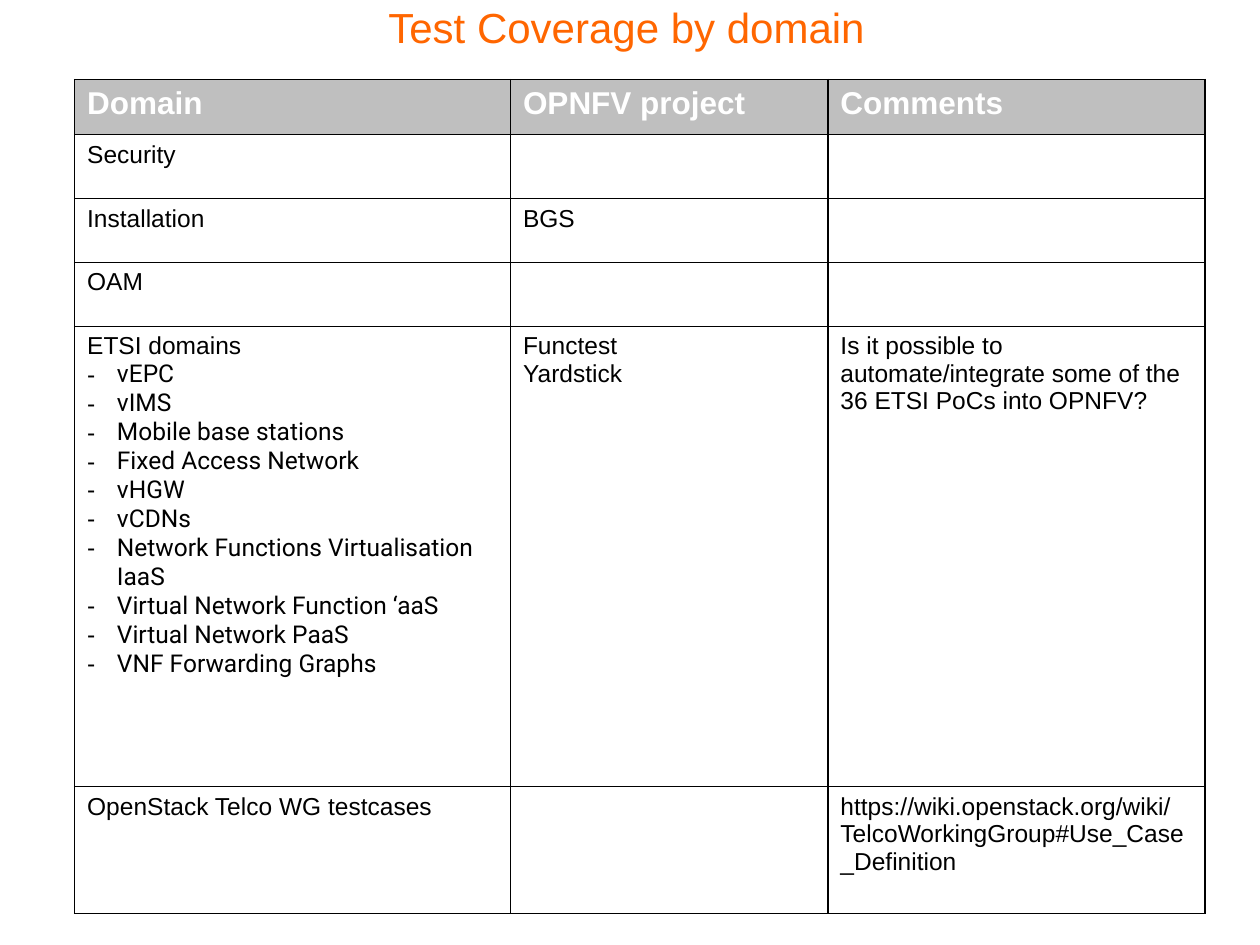
from lxml.etree import SubElement
from pptx import Presentation
from pptx.dml.color import RGBColor
from pptx.enum.text import PP_ALIGN
from pptx.oxml.ns import qn
from pptx.util import Pt

ORANGE = RGBColor(0xFF, 0x66, 0x00)
GRAY = RGBColor(0xBF, 0xBF, 0xBF)
WHITE = RGBColor(0xFF, 0xFF, 0xFF)
BLACK = RGBColor(0x00, 0x00, 0x00)

TITLE_FORMAT = {"name": "Arial", "size": Pt(24), "color": ORANGE}
HEADER_FORMAT = {"name": "Arial", "size": Pt(18), "bold": True, "color": WHITE}
BODY_FORMAT = {"name": "Arial", "size": Pt(14), "bold": False, "color": BLACK}
BULLET_FORMAT = {**BODY_FORMAT, "name": "Roboto"}

BULLET = "- "
COLUMN_WIDTHS = [249.1, 181.4, 215.6]
ROW_HEIGHTS = [31.5, 36.5, 36.5, 36.5, 263, 72.6]
ROWS = [
    [["Domain"], ["OPNFV project"], ["Comments"]],
    [["Security"], [], []],
    [["Installation"], ["BGS"], []],
    [["OAM"], [], []],
    [
        [
            "ETSI domains",
            "- vEPC",
            "- vIMS",
            "- Mobile base stations",
            "- Fixed Access Network",
            "- vHGW",
            "- vCDNs",
            "- Network Functions Virtualisation IaaS",
            "- Virtual Network Function ‘aaS",
            "- Virtual Network PaaS",
            "- VNF Forwarding Graphs",
        ],
        ["Functest", "Yardstick"],
        ["Is it possible to automate/integrate some of the 36 ETSI PoCs into OPNFV?"],
    ],
    [
        ["OpenStack Telco WG testcases"],
        [],
        ["https://wiki.openstack.org/wiki/TelcoWorkingGroup#Use_Case_Definition"],
    ],
]


def format_font(font, values):
    for name, value in values.items():
        if name == "color":
            font.color.rgb = value
        else:
            setattr(font, name, value)


def add_bullet(paragraph):
    """Give the paragraph a dash bullet with a hanging indent."""
    properties = paragraph._p.get_or_add_pPr()
    indent = Pt(17)
    properties.set("marL", str(indent))
    properties.set("indent", str(-indent))
    SubElement(properties, qn("a:buFont"), typeface="Arial")
    SubElement(properties, qn("a:buChar"), char=BULLET.strip())


def add_borders(cell):
    properties = cell._tc.get_or_add_tcPr()
    for side in ("lnL", "lnR", "lnT", "lnB"):
        line = SubElement(properties, qn(f"a:{side}"), w=str(Pt(1)))
        fill = SubElement(line, qn("a:solidFill"))
        SubElement(fill, qn("a:srgbClr"), val=str(BLACK))


def fill_cell(cell, lines, is_header):
    """Write the lines as paragraphs; a leading dash makes a bullet."""
    add_borders(cell)
    if is_header:
        cell.fill.solid()
        cell.fill.fore_color.rgb = GRAY
    else:
        cell.fill.background()
    frame = cell.text_frame
    for index, line in enumerate(lines):
        paragraph = frame.add_paragraph() if index else frame.paragraphs[0]
        values = HEADER_FORMAT if is_header else BODY_FORMAT
        if line.startswith(BULLET):
            add_bullet(paragraph)
            values = BULLET_FORMAT
        run = paragraph.add_run()
        run.text = line.removeprefix(BULLET)
        format_font(run.font, values)


def add_title(slide, text):
    shape = slide.shapes.add_textbox(Pt(80), Pt(0.7), Pt(556), Pt(90))
    frame = shape.text_frame
    frame.word_wrap = True
    for side in ("left", "right", "top", "bottom"):
        setattr(frame, f"margin_{side}", Pt(0))
    paragraph = frame.paragraphs[0]
    paragraph.alignment = PP_ALIGN.CENTER
    run = paragraph.add_run()
    run.text = text
    format_font(run.font, TITLE_FORMAT)


def add_coverage_table(slide):
    shape = slide.shapes.add_table(
        len(ROWS), len(COLUMN_WIDTHS), Pt(42.6), Pt(45.5),
        Pt(sum(COLUMN_WIDTHS)), Pt(sum(ROW_HEIGHTS)),
    )
    table = shape.table
    table.first_row = False
    table.horz_banding = False
    for column, width in zip(table.columns, COLUMN_WIDTHS):
        column.width = Pt(width)
    for row_index, (row, height) in enumerate(zip(table.rows, ROW_HEIGHTS)):
        row.height = Pt(height)
        for cell, lines in zip(row.cells, ROWS[row_index]):
            fill_cell(cell, lines, row_index == 0)


def main():
    presentation = Presentation()
    presentation.slide_width = Pt(720)
    presentation.slide_height = Pt(540)
    slide = presentation.slides.add_slide(presentation.slide_layouts[6])
    add_title(slide, "Test Coverage by domain")
    add_coverage_table(slide)
    presentation.save("out.pptx")


if __name__ == "__main__":
    main()
